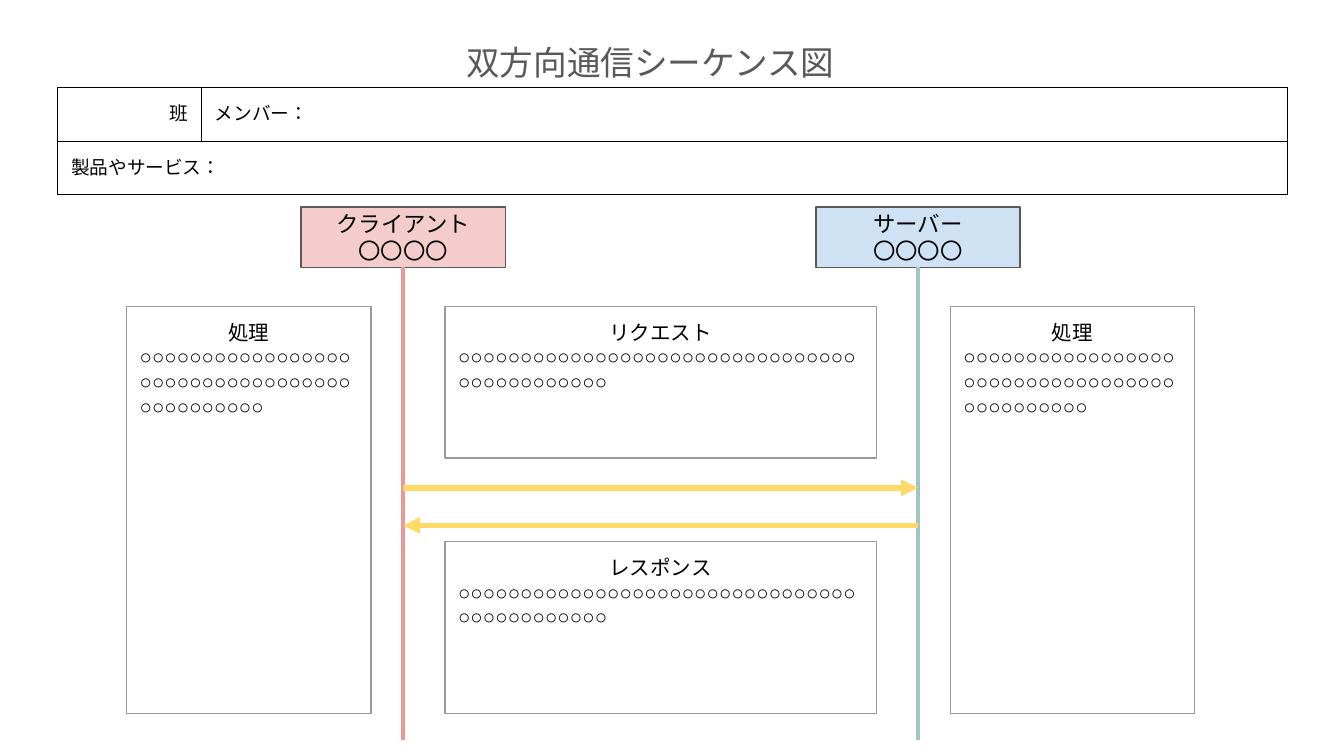
import pptx
import pptx.enum.dml
import pptx.enum.lang
import pptx.enum.shapes
import pptx.enum.text
import pptx.oxml
import pptx.oxml.ns
import pptx.util
from pptx.dml.color import RGBColor

Inches, Pt = pptx.util.Inches, pptx.util.Pt
ALIGN = pptx.enum.text.PP_ALIGN
ANCHOR = pptx.enum.text.MSO_ANCHOR
FONT = "Arial"
COLORS = {
    "text": "000000", "title": "595959", "white": "FFFFFF", "edge": "999999",
    "client": "F4CCCC", "server": "CFE2F3",
    "client_line": "EA9999", "server_line": "A2C4C9", "arrow": "FFD966",
}

# Content
TITLE = "双方向通信シーケンス図"
ROWS = [
    # (first column, last column, text, alignment)
    [(0, 0, "班", ALIGN.RIGHT), (1, 3, "メンバー：　", ALIGN.LEFT)],
    [(0, 3, "製品やサービス：", ALIGN.LEFT)],
]
BLANK = "○" * 44
ACTORS = [("client", "クライアント"), ("server", "サーバー")]
STEP = "処理"
REQUEST, REPLY = "リクエスト", "レスポンス"

# Grid, in inches
WIDE = 10
COLS = [1.07, 1.28, 2.85, 3.95]
ROW = 0.4
LANES = {"client": 3.0, "server": 6.83}
HEAD_W, HEAD_H, HEAD_Y = 1.52, 0.45, 1.54
NOTE_W, NOTE_GAP = 1.82, 0.24
MSG_GAP = 0.31
TOP, BOTTOM, END = 2.28, 5.31, 5.51
REQ_END, REPLY_TOP = 3.41, 4.03
ARROWS = [("client", "server", 3.63), ("server", "client", 3.91)]


def rgb(name):
    return RGBColor.from_string(COLORS[name])


def element(tag, body=""):
    ns = pptx.oxml.ns.nsdecls("a")
    return pptx.oxml.parse_xml(f"<a:{tag} {ns}>{body}</a:{tag.split()[0]}>")


def write(frame, lines, size, aligns, color="text"):
    """Fill a text frame, one paragraph per line, and format it."""
    frame.text = "\n".join(lines)
    for para, align in zip(frame.paragraphs, aligns):
        para.alignment = align
        for run in para.runs:
            font = run.font
            font.name, font.size = FONT, Pt(size)
            font.color.rgb = rgb(color)
            font.language_id = pptx.enum.lang.MSO_LANGUAGE_ID.JAPANESE
            latin = font._element.find(pptx.oxml.ns.qn("a:latin"))
            latin.addnext(element(f'ea typeface="{FONT}"'))


def pad(target):
    for side in ("left", "right", "top", "bottom"):
        setattr(target, f"margin_{side}", Inches(0.1))


def box(slide, x, y, w, h, fill, edge, lines, size, aligns, anchor):
    shape = slide.shapes.add_shape(
        pptx.enum.shapes.MSO_SHAPE.RECTANGLE,
        Inches(x), Inches(y), Inches(w), Inches(h))
    shape.shadow.inherit = False
    shape.fill.solid()
    shape.fill.fore_color.rgb = rgb(fill)
    shape.line.color.rgb = rgb(edge)
    shape.line.width = Pt(0.75)
    frame = shape.text_frame
    frame.word_wrap = True
    frame.vertical_anchor = anchor
    pad(frame)
    write(frame, lines, size, aligns)


def note(slide, x, y, w, end, name):
    box(slide, x, y, w, end - y, "white", "edge", [name, BLANK], 11,
        [ALIGN.CENTER, ALIGN.LEFT], ANCHOR.TOP)


def line(slide, x1, y1, x2, y2, color, width, arrow=False):
    link = slide.shapes.add_connector(
        pptx.enum.shapes.MSO_CONNECTOR.STRAIGHT,
        Inches(x1), Inches(y1), Inches(x2), Inches(y2))
    link.line.color.rgb = rgb(color)
    link.line.width = Pt(width)
    if arrow:
        link.line._get_or_add_ln().append(element('tailEnd type="triangle"'))
    link._element.spPr.append(element("effectLst"))


def add_title(slide):
    title = slide.shapes.title
    title.left, title.top = Inches(3.37), Inches(0.21)
    title.width, title.height = Inches(3.4), Inches(0.45)
    frame = title.text_frame
    frame.word_wrap = True
    frame.auto_size = pptx.enum.text.MSO_AUTO_SIZE.NONE
    frame.vertical_anchor = ANCHOR.TOP
    pad(frame)
    write(frame, [TITLE], 18, [ALIGN.LEFT], "title")


def add_form(slide):
    table = slide.shapes.add_table(
        len(ROWS), len(COLS), Inches(0.43), Inches(0.65),
        Inches(sum(COLS)), Inches(ROW * len(ROWS))).table
    table.first_row = table.horz_banding = False
    for col, width in zip(table.columns, COLS):
        col.width = Inches(width)
    for row in table.rows:
        row.height = Inches(ROW)
    ink = f'<a:solidFill><a:srgbClr val="{COLORS["text"]}"/></a:solidFill>'
    for cell in table.iter_cells():
        props = cell._tc.get_or_add_tcPr()
        for side in "LRTB":
            props.append(element(f'ln{side} w="{Pt(0.75)}"', ink))
        cell.fill.background()
        cell.vertical_anchor = ANCHOR.MIDDLE
        pad(cell)
    for r, fields in enumerate(ROWS):
        for first, last, text, align in fields:
            cell = table.cell(r, first)
            if last > first:
                cell.merge(table.cell(r, last))
            write(cell.text_frame, [text], 10, [align])


def add_flow(slide):
    for key, name in ACTORS:
        x = LANES[key]
        box(slide, x - HEAD_W / 2, HEAD_Y, HEAD_W, HEAD_H, key, "title",
            [name, "〇〇〇〇"], 12, [ALIGN.CENTER] * 2, ANCHOR.MIDDLE)
        line(slide, x, HEAD_Y + HEAD_H, x, END, f"{key}_line", 2.25)
    for start, stop, y in ARROWS:
        line(slide, LANES[start], y, LANES[stop], y, "arrow", 3, True)
    left, right = LANES["client"], LANES["server"]
    for x in (left - NOTE_GAP - NOTE_W, right + NOTE_GAP):
        note(slide, x, TOP, NOTE_W, BOTTOM, STEP)
    width = right - left - 2 * MSG_GAP
    for name, y, end in ((REQUEST, TOP, REQ_END), (REPLY, REPLY_TOP, BOTTOM)):
        note(slide, left + MSG_GAP, y, width, end, name)


def main():
    deck = pptx.Presentation()
    deck.slide_width = Inches(WIDE)
    deck.slide_height = Inches(WIDE * 9 / 16)
    slide = deck.slides.add_slide(deck.slide_layouts[5])
    add_title(slide)
    add_form(slide)
    add_flow(slide)
    deck.save("out.pptx")


if __name__ == "__main__":
    main()
